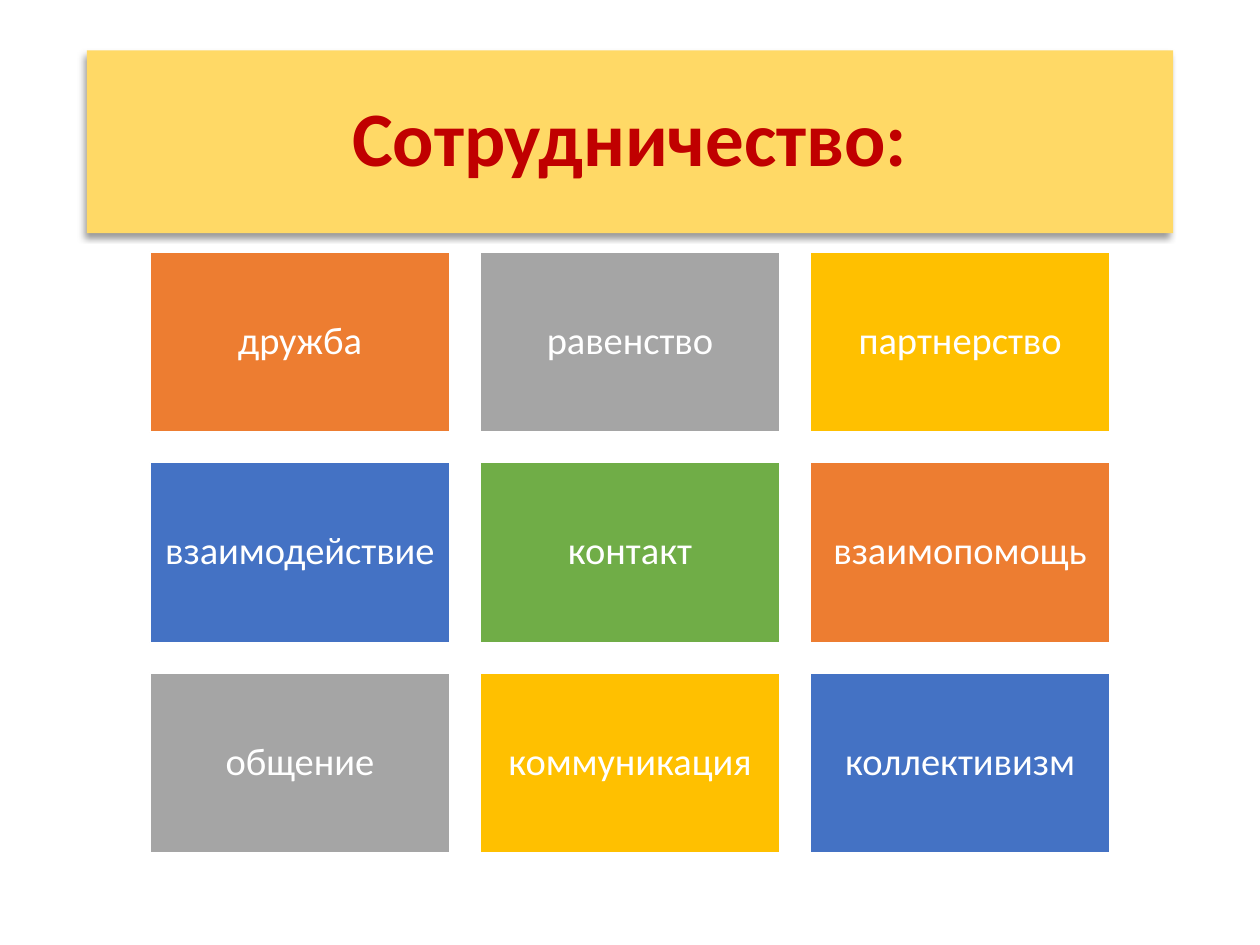
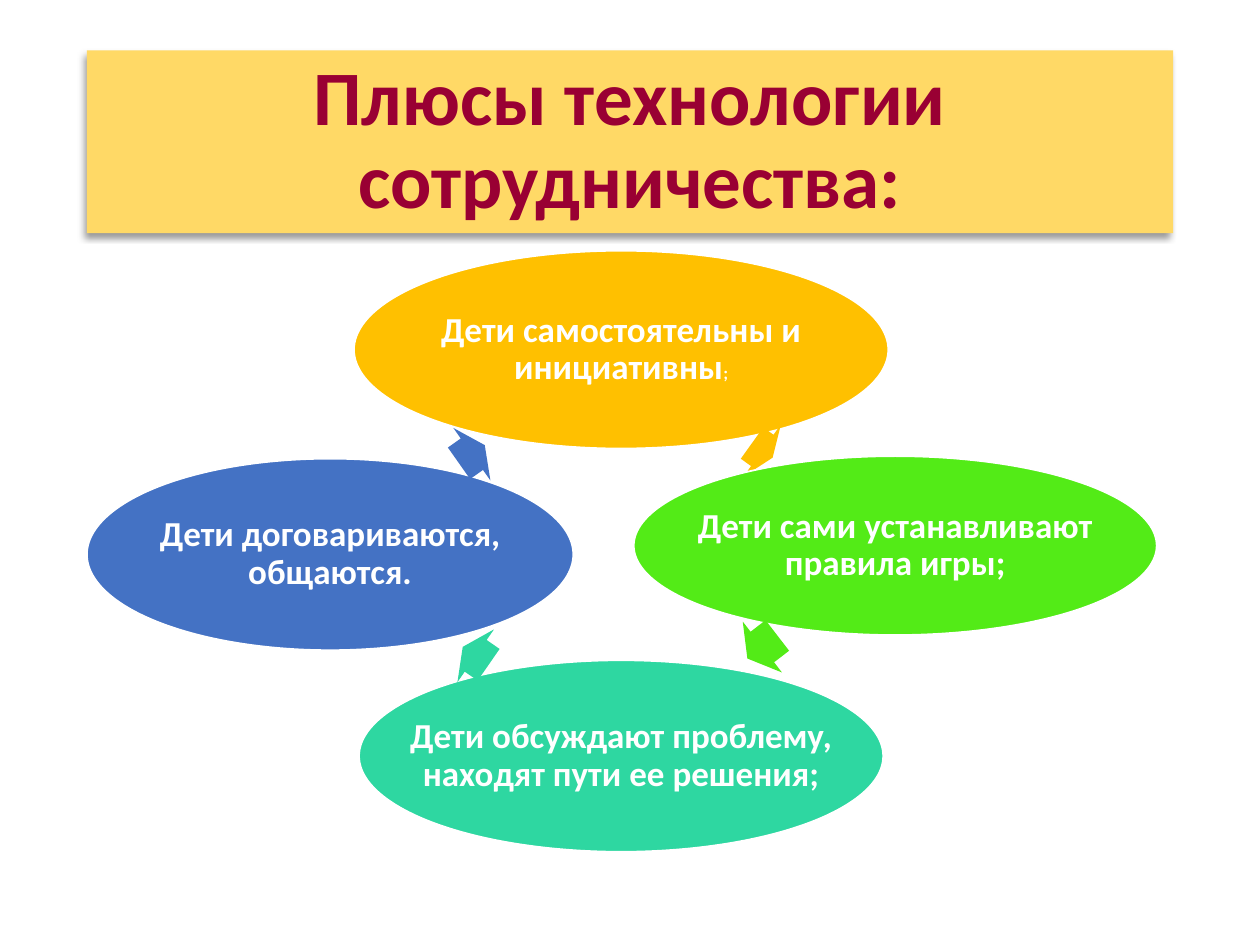
import lxml.etree
import pptx
import pptx.dml.color
import pptx.enum.shapes
import pptx.enum.text
import pptx.oxml
import pptx.oxml.ns
import pptx.util

Inches = pptx.util.Inches
Pt = pptx.util.Pt
Shape = pptx.enum.shapes.MSO_SHAPE

SLIDE_WIDTH, SLIDE_HEIGHT = 10, 7.5
TITLE_BAND = (0.69, 0.4, 8.62, 1.45)
FONT = "Calibri"
COLORS = {
    "white": "FFFFFF",
    "band": "FFD966",
    "red": "C00000",
    "crimson": "990033",
    "orange": "ED7D31",
    "gray": "A5A5A5",
    "gold": "FFC000",
    "blue": "4472C4",
    "green": "70AD47",
    "lime": "53EB17",
    "mint": "2ED7A1",
}

TILE_COLUMNS = 3
TILE_WIDTH, TILE_HEIGHT, TILE_GAP = 2.38, 1.43, 0.24
TILES_TOP = 2
TILES = [
    ("дружба", "orange"), ("равенство", "gray"), ("партнерство", "gold"),
    ("взаимодействие", "blue"), ("контакт", "green"), ("взаимопомощь", "orange"),
    ("общение", "gray"), ("коммуникация", "gold"), ("коллективизм", "blue"),
]

# Each step: colour, oval box, text runs with sizes, arrow box, arrow rotation
CYCLE = [
    ("gold", (2.81, 1.99, 4.24, 1.57),
     [("Дети самостоятельны и инициативны", 20), (";", 10)],
     (5.95, 3.32, 0.2, 0.51), 35.6),
    ("lime", (5.03, 3.62, 4.15, 1.42),
     [("Дети сами устанавливают правила игры;", 20)],
     (5.9, 4.88, 0.3, 0.51), 142.4),
    ("mint", (2.85, 5.24, 4.16, 1.52),
     [("Дети обсуждают проблему, находят пути ее решения;", 20)],
     (3.65, 4.95, 0.25, 0.51), 214.7),
    ("blue", (0.69, 3.64, 3.86, 1.52),
     [("Дети договариваются, общаются.", 20)],
     (3.62, 3.35, 0.25, 0.51), 324.8),
]


def rgb(color):
    return pptx.dml.color.RGBColor.from_string(COLORS[color])


def inches(box):
    return [Inches(length) for length in box]


def write(shape, runs, color, bold=False, inset=0.1):
    """Fill a shape with one centred paragraph made of (text, size) runs."""
    frame = shape.text_frame
    frame.word_wrap = True
    frame.auto_size = pptx.enum.text.MSO_AUTO_SIZE.NONE
    frame.vertical_anchor = pptx.enum.text.MSO_ANCHOR.MIDDLE
    frame.margin_left = frame.margin_right = Inches(inset)
    frame.margin_top = frame.margin_bottom = Inches(min(inset, 0.05))
    para = frame.paragraphs[0]
    para.alignment = pptx.enum.text.PP_ALIGN.CENTER
    para.line_spacing = 0.9
    for text, size in runs:
        span = para.add_run()
        span.text = text
        span.font.name = FONT
        span.font.size = Pt(size)
        span.font.bold = bold
        span.font.color.rgb = rgb(color)


def add_band_shadow(shape):
    namespace = pptx.oxml.ns.nsdecls("a")
    effects = pptx.oxml.parse_xml(
        f'<a:effectLst {namespace}>'
        f'<a:outerShdw blurRad="{Pt(4)}" dist="{Pt(3)}" dir="{135 * 60000}" '
        'algn="tr" rotWithShape="0"><a:srgbClr val="000000">'
        '<a:alpha val="40000"/></a:srgbClr></a:outerShdw></a:effectLst>')
    shape.element.spPr.append(effects)


def add_titled_page(deck, title, color):
    page = deck.slides.add_slide(deck.slide_layouts[5])
    band = page.shapes.title
    band.left, band.top, band.width, band.height = inches(TITLE_BAND)
    band.fill.solid()
    band.fill.fore_color.rgb = rgb("band")
    add_band_shadow(band)
    write(band, [(title, 44)], color, bold=True)
    return page


def add_filled(page, kind, box, color, outlined=True):
    shape = page.shapes.add_shape(kind, *inches(box))
    shape.shadow.inherit = False
    shape.fill.solid()
    shape.fill.fore_color.rgb = rgb(color)
    if outlined:
        shape.line.color.rgb = rgb("white")
        shape.line.width = Pt(1)
    else:
        shape.line.fill.background()
    return shape


def add_tiles(page):
    grid_width = TILE_COLUMNS * (TILE_WIDTH + TILE_GAP) - TILE_GAP
    left = (SLIDE_WIDTH - grid_width) / 2
    for index, (word, color) in enumerate(TILES):
        row, column = divmod(index, TILE_COLUMNS)
        box = (left + column * (TILE_WIDTH + TILE_GAP),
               TILES_TOP + row * (TILE_HEIGHT + TILE_GAP),
               TILE_WIDTH, TILE_HEIGHT)
        tile = add_filled(page, Shape.RECTANGLE, box, color)
        write(tile, [(word, 22)], "white", inset=0.09)


def add_cycle(page):
    for color, oval_box, runs, arrow_box, rotation in CYCLE:
        add_filled(page, Shape.OVAL, oval_box, color)
        # The text runs wider than the area an oval reserves for its own text
        label = page.shapes.add_textbox(*inches(oval_box))
        write(label, runs, "white", bold=True, inset=0.03)
        arrow = add_filled(page, Shape.RIGHT_ARROW, arrow_box, color, outlined=False)
        arrow.adjustments[0] = 0.6
        arrow.adjustments[1] = 0.5
        arrow.rotation = rotation


def main():
    deck = pptx.Presentation()
    deck.slide_width, deck.slide_height = inches((SLIDE_WIDTH, SLIDE_HEIGHT))
    add_tiles(add_titled_page(deck, "Сотрудничество:", "red"))
    add_cycle(add_titled_page(deck, "Плюсы технологии сотрудничества:", "crimson"))
    deck.save("out.pptx")


if __name__ == "__main__":
    main()
